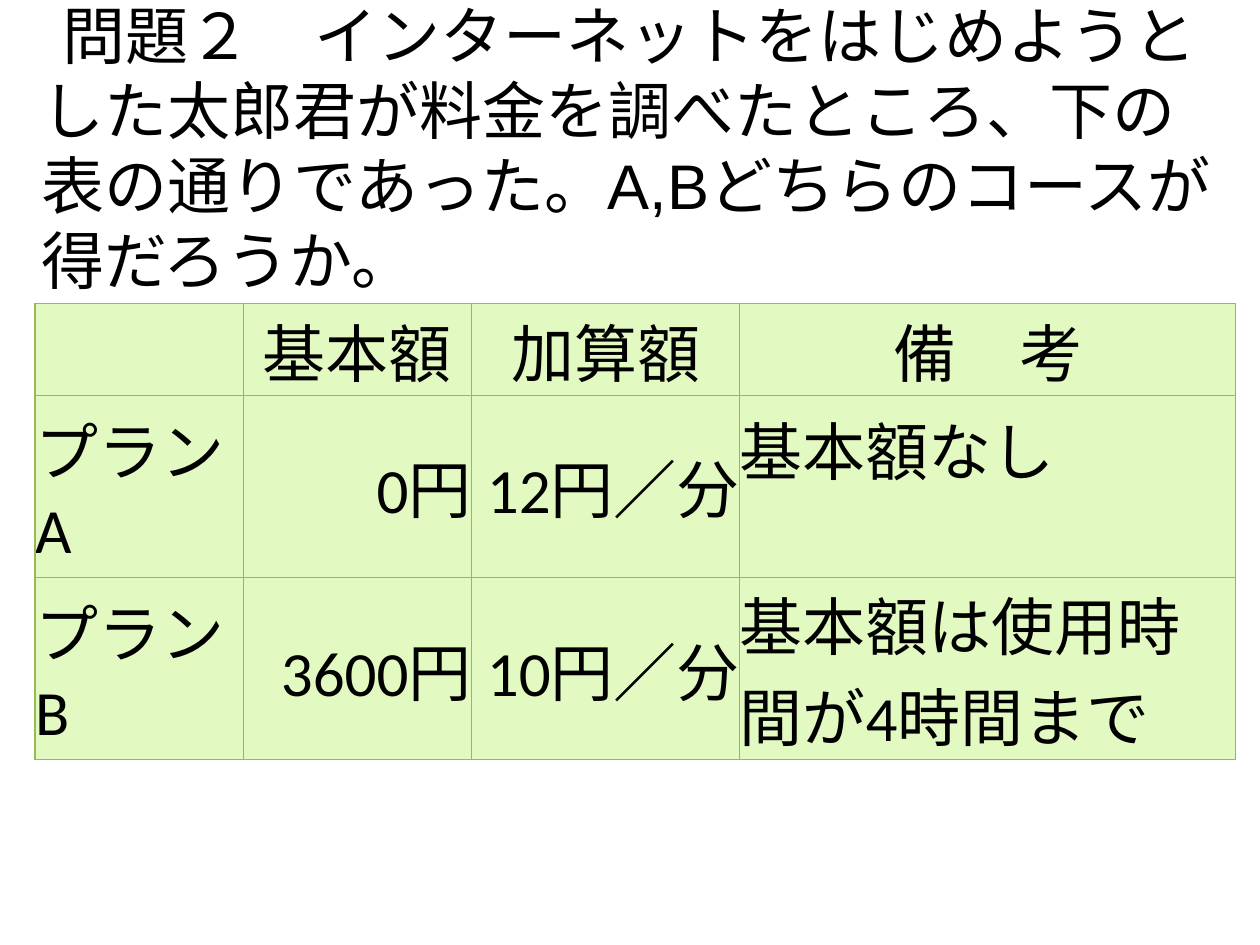
from lxml.etree import SubElement
from pptx import Presentation
from pptx.dml.color import RGBColor
from pptx.enum.text import MSO_ANCHOR, MSO_AUTO_SIZE, PP_ALIGN
from pptx.oxml.ns import qn
from pptx.util import Pt


def format_text(para, font_name, align):
    para.alignment = align
    for span in para.runs:
        span.font.name = font_name
        span.font.size = Pt(36)
        span.font.color.rgb = RGBColor.from_string("000000")


def style_cell(cell, fill, line):
    properties = cell._tc.get_or_add_tcPr()
    for side in ("a:lnL", "a:lnR", "a:lnT", "a:lnB"):
        border = SubElement(properties, qn(side), w=str(Pt(0.75)))
        color = SubElement(SubElement(border, qn("a:solidFill")), qn("a:srgbClr"))
        color.set("val", line)
    cell.fill.solid()
    cell.fill.fore_color.rgb = RGBColor.from_string(fill)


deck = Presentation()
deck.slide_width, deck.slide_height = Pt(720), Pt(540)
page = deck.slides.add_slide(deck.slide_layouts[5])

# Price table
rows = [
    ["", "基本額", "加算額", "備　考"],
    ["プランA", "0円", "12円／分", "基本額なし"],
    ["プランB", "3600円", "10円／分", "基本額は使用時間が4時間まで"],
]
column_widths = [119, 130.5, 153.2, 283.5]
row_heights = [52.4, 104.2, 104.2]
column_aligns = [PP_ALIGN.LEFT, PP_ALIGN.RIGHT, PP_ALIGN.RIGHT, PP_ALIGN.LEFT]

table = page.shapes.add_table(
    len(rows), len(column_widths), Pt(20), Pt(173.5),
    Pt(sum(column_widths)), Pt(sum(row_heights))).table
table.horz_banding = False
table.first_row = False
for column, width in zip(table.columns, column_widths):
    column.width = Pt(width)
for row, height in zip(table.rows, row_heights):
    row.height = Pt(height)

for row_index, texts in enumerate(rows):
    for column_index, text in enumerate(texts):
        cell = table.cell(row_index, column_index)
        cell.margin_left = cell.margin_right = 0
        cell.margin_top = cell.margin_bottom = 0
        cell.vertical_anchor = MSO_ANCHOR.MIDDLE
        cell.text_frame.text = text
        align = PP_ALIGN.CENTER if row_index == 0 else column_aligns[column_index]
        format_text(cell.text_frame.paragraphs[0], "Calibri", align)
        style_cell(cell, "E2FAC1", "98B955")

# The short remark sits level with the first line of its row
remark = table.cell(1, 3)
remark.vertical_anchor = MSO_ANCHOR.TOP
remark.margin_top = Pt(4)

# Problem statement
title = page.shapes.title
title.left, title.top, title.width, title.height = Pt(16.5), Pt(15), Pt(689), Pt(138)
frame = title.text_frame
frame.text = ("問題２　インターネットをはじめようとした太郎君が料金を調べたところ、"
              "下の表の通りであった。A,Bどちらのコースが得だろうか。　")
frame.word_wrap = True
frame.auto_size = MSO_AUTO_SIZE.NONE
frame.vertical_anchor = MSO_ANCHOR.MIDDLE
statement = frame.paragraphs[0]
format_text(statement, "Arial", PP_ALIGN.LEFT)
statement.line_spacing = Pt(43)
statement._p.get_or_add_pPr().set("indent", str(Pt(12)))

deck.save("out.pptx")
